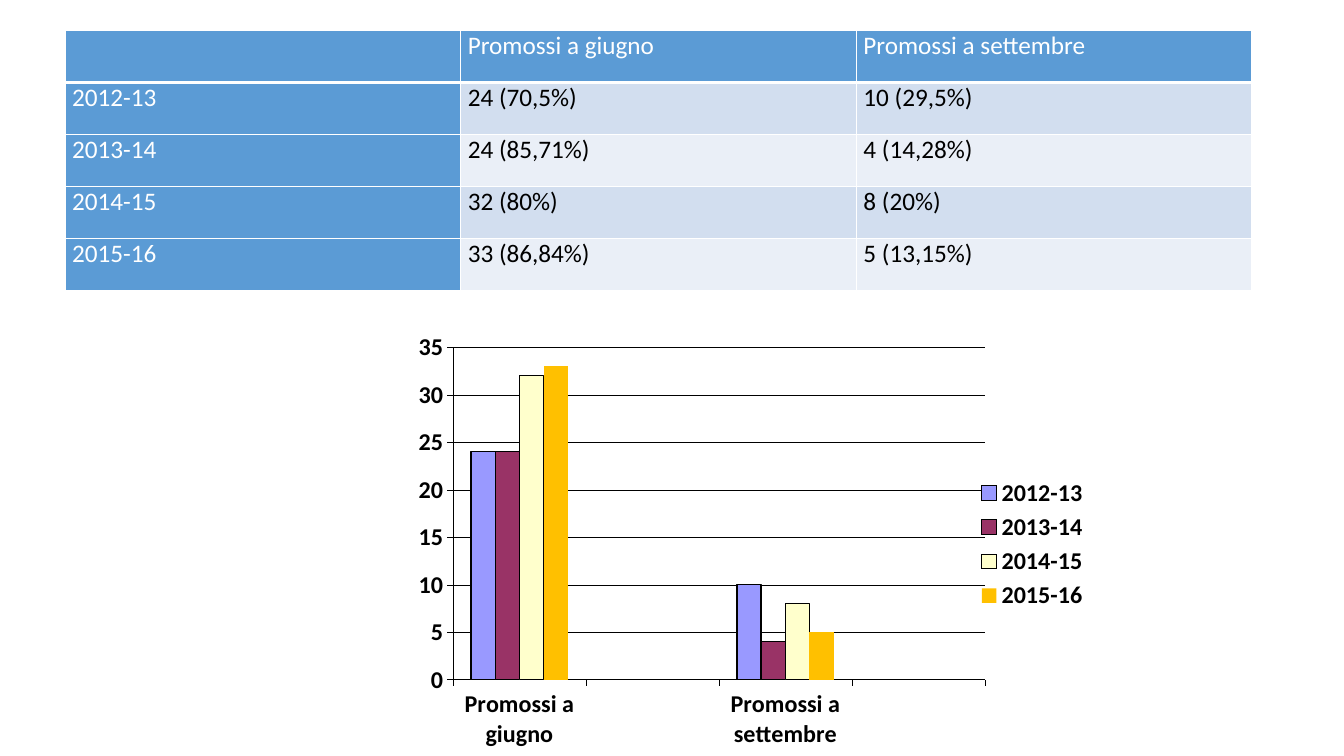
from lxml import etree
from pptx import Presentation
from pptx.chart.data import CategoryChartData
from pptx.dml.color import RGBColor
from pptx.enum import chart as ch, text
from pptx.oxml import parse_xml
from pptx.oxml.ns import nsdecls, qn
from pptx.util import Cm, Pt

COLORS = {"white": "FFFFFF", "black": "000000", "header": "5B9BD5",
          "band_dark": "D2DEEF", "band_light": "EAEFF7"}
FONT = "Calibri"
ROWS = [
    ("", "Promossi a giugno", "Promossi a settembre"),
    ("2012-13", "24 (70,5%)", "10 (29,5%)"),
    ("2013-14", "24 (85,71%)", "4 (14,28%)"),
    ("2014-15", "32 (80%)", "8 (20%)"),
    ("2015-16", "33 (86,84%)", "5 (13,15%)"),
]
CATEGORIES = ["Promossi a giugno", "", "Promossi a settembre", ""]
SERIES = [
    ("2012-13", (24, None, 10, None), "9999FF", True),
    ("2013-14", (24, None, 4, None), "993366", True),
    ("2014-15", (32, None, 8, None), "FFFFCC", True),
    ("2015-16", (33, None, 5, None), "FFC000", False),
]
PLOT = {"x": 0.07, "y": 0.035, "w": 0.766, "h": 0.785}


def rgb(value):
    return RGBColor.from_string(value)


def style_font(font, size, color, bold):
    font.name = FONT
    font.size = Pt(size)
    font.bold = bold
    font.color.rgb = rgb(color)


def style_line(line, width):
    line.color.rgb = rgb(COLORS["black"])
    line.width = Pt(width)


def set_borders(cell, bottom):
    tc_pr = cell._tc.get_or_add_tcPr()
    for i, (side, width) in enumerate(zip("LRTB", (1, 1, 1, bottom))):
        tc_pr.insert(i, parse_xml(
            f'<a:ln{side} {nsdecls("a")} w="{Pt(width)}"><a:solidFill>'
            f'<a:srgbClr val="{COLORS["white"]}"/></a:solidFill></a:ln{side}>'))


def add_results_table(s):
    frame = s.shapes.add_table(len(ROWS), len(ROWS[0]),
                               Cm(1.64), Cm(0.77), Cm(29.91), Cm(6.55))
    table = frame.table
    table.first_row = table.horz_banding = False
    for col in table.columns:
        col.width = Cm(9.97)
    for r, row in enumerate(ROWS):
        table.rows[r].height = Cm(1.31)
        for c, value in enumerate(row):
            cell = table.cell(r, c)
            heading = r == 0 or c == 0
            band = "band_dark" if r % 2 else "band_light"
            cell.fill.solid()
            cell.fill.fore_color.rgb = rgb(COLORS["header" if heading else band])
            cell.margin_left = cell.margin_right = Cm(0.18)
            cell.margin_top = cell.margin_bottom = 0
            set_borders(cell, 3 if r == 0 else 1)
            cell.text_frame.text = value
            p = cell.text_frame.paragraphs[0]
            p.alignment = text.PP_ALIGN.JUSTIFY
            for run in p.runs:
                style_font(run.font, 18, COLORS["white" if heading else "black"], False)


def set_plot_layout(chart):
    plot_area = chart._chartSpace.chart.plotArea
    for old in plot_area.findall(qn("c:layout")):
        plot_area.remove(old)
    layout = etree.Element(qn("c:layout"))
    manual = etree.SubElement(layout, qn("c:manualLayout"))
    settings = {"layoutTarget": "inner", "xMode": "edge", "yMode": "edge", **PLOT}
    for name, value in settings.items():
        etree.SubElement(manual, qn(f"c:{name}")).set("val", str(value))
    plot_area.insert(0, layout)


def add_results_chart(s):
    data = CategoryChartData()
    data.categories = CATEGORIES
    for name, values, _, _ in SERIES:
        data.add_series(name, values)
    chart = s.shapes.add_chart(ch.XL_CHART_TYPE.COLUMN_CLUSTERED, Cm(10.19), Cm(8.38),
                               Cm(17.5), Cm(10.67), data).chart
    chart.has_title = False
    style_font(chart.font, 17.2, COLORS["black"], True)
    chart.has_legend = True
    chart.legend.position = ch.XL_LEGEND_POSITION.RIGHT
    chart.legend.include_in_layout = False
    style_font(chart.legend.font, 17.2, COLORS["black"], True)

    plot = chart.plots[0]
    plot.gap_width = 150
    plot.overlap = 0
    plot.vary_by_categories = False
    for series, (_, _, color, outlined) in zip(plot.series, SERIES):
        series.invert_if_negative = False
        series.format.fill.solid()
        series.format.fill.fore_color.rgb = rgb(color)
        if outlined:
            style_line(series.format.line, 1)
        else:
            series.format.line.fill.background()

    for axis in (chart.category_axis, chart.value_axis):
        axis.major_tick_mark = ch.XL_TICK_MARK.OUTSIDE
        axis.minor_tick_mark = ch.XL_TICK_MARK.NONE
        style_font(axis.tick_labels.font, 17.2, COLORS["black"], True)
        style_line(axis.format.line, 0.25)
    chart.category_axis.tick_label_position = ch.XL_TICK_LABEL_POSITION.LOW
    values = chart.value_axis
    values.minimum_scale, values.maximum_scale, values.major_unit = 0, 35, 5
    values.has_major_gridlines = True
    style_line(values.major_gridlines.format.line, 0.25)
    set_plot_layout(chart)


def main():
    prs = Presentation()
    prs.slide_width, prs.slide_height = Cm(33.87), Cm(19.05)
    s = prs.slides.add_slide(prs.slide_layouts[6])
    add_results_table(s)
    add_results_chart(s)
    prs.save("out.pptx")


if __name__ == "__main__":
    main()
